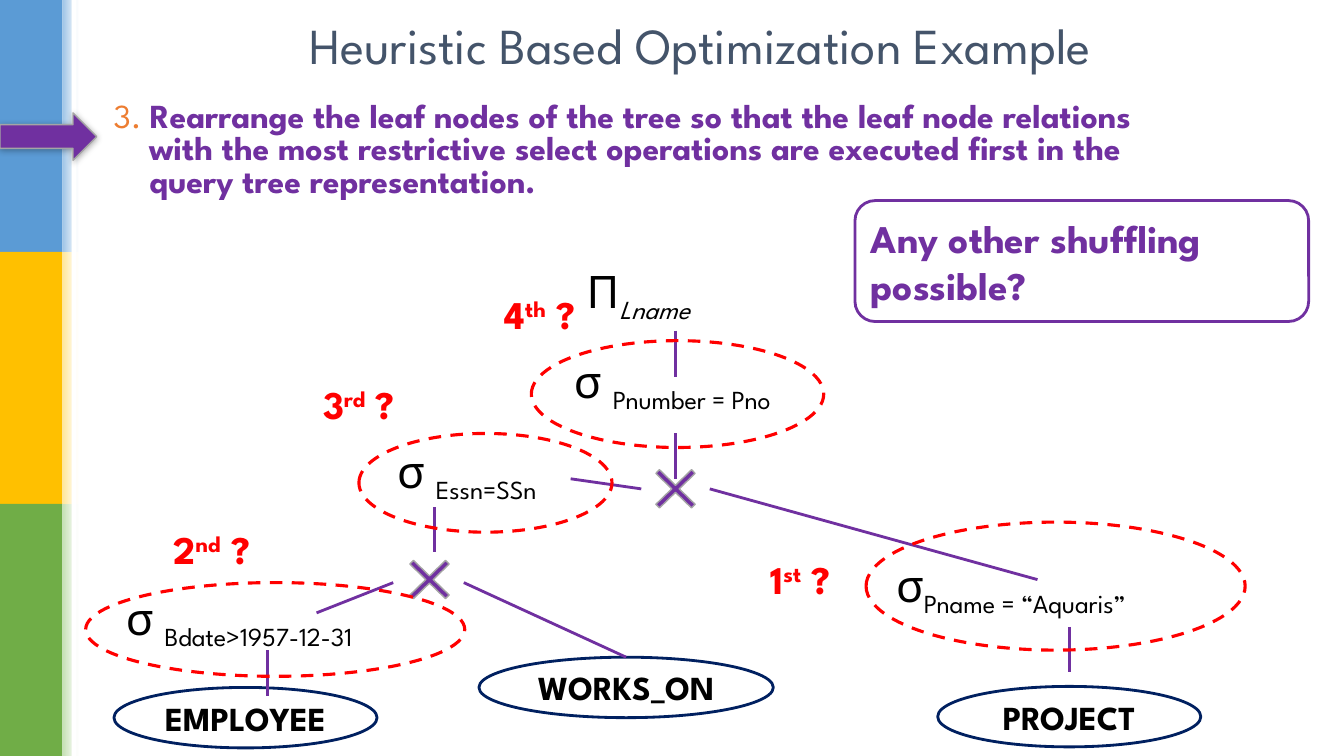
from dataclasses import dataclass
from typing import NamedTuple, Optional

import lxml.etree
import pptx
import pptx.dml.color
import pptx.enum.dml
import pptx.enum.shapes
import pptx.enum.text
import pptx.oxml.ns
import pptx.util

Inches = pptx.util.Inches
Pt = pptx.util.Pt
Preset = pptx.enum.shapes.MSO_SHAPE
Align = pptx.enum.text.PP_ALIGN
Anchor = pptx.enum.text.MSO_ANCHOR
qn = pptx.oxml.ns.qn


@dataclass(frozen=True)
class Theme:
    font: str = "League Spartan"
    title: str = "44546A"
    number: str = "ED7D31"
    purple: str = "7030A0"
    navy: str = "002060"
    red: str = "FF0000"
    grey: str = "A5A5A5"
    black: str = "000000"
    white: str = "FFFFFF"
    title_size: float = 36
    body_size: float = 24
    label_size: float = 28
    operator_size: float = 32


THEME = Theme()


class Box(NamedTuple):
    left: float
    top: float
    width: float
    height: float


class Band(NamedTuple):
    colour: str
    tint: str


class Relation(NamedTuple):
    name: str
    box: Box


class Operator(NamedTuple):
    symbol: str
    condition: str
    box: Box
    italic: bool = False
    centred: bool = False


class Step(NamedTuple):
    number: str
    suffix: str
    label: Box
    ring: Box


class Edge(NamedTuple):
    x1: float
    y1: float
    x2: float
    y2: float
    relation: Optional[str] = None


BANDS = [Band("5B9BD5", "9DC3E6"), Band("FFC000", "FFE699"), Band("70AD47", "C5E0B4")]
INSTRUCTION = [
    "Rearrange the leaf nodes of the tree so that the leaf node relations",
    "with the most restrictive select operations are executed first in the",
    "query tree representation.",
]
RELATIONS = [
    Relation("EMPLOYEE", Box(1.13, 6.82, 2.61, 0.6)),
    Relation("WORKS_ON", Box(4.75, 6.52, 2.92, 0.6)),
    Relation("PROJECT", Box(9.3, 6.81, 2.61, 0.6)),
]
OPERATORS = [
    Operator("Π", "Lname", Box(5.72, 2.57, 1.67, 0.66), italic=True),
    Operator("σ ", "Pnumber = Pno ", Box(0.85, 3.58, 11.7, 0.47), centred=True),
    Operator("σ ", "Essn=SSn", Box(3.84, 4.35, 1.94, 0.64)),
    Operator("σ ", "Bdate>1957-12-31", Box(1.15, 5.81, 3.12, 0.64)),
    Operator("σ", "Pname = “Aquaris”", Box(8.79, 5.48, 3.4, 0.64)),
]
PRODUCTS = [Box(3.92, 5.42, 0.68, 0.66), Box(6.36, 4.52, 0.68, 0.66)]
STEPS = [
    Step("1", "st", Box(7.4, 5.53, 1.08, 0.43), Box(8.59, 5.18, 3.76, 1.27)),
    Step("2", "nd", Box(1.56, 5.23, 1.08, 0.43), Box(0.85, 5.78, 3.76, 0.93)),
    Step("3", "rd", Box(3.02, 3.79, 1.08, 0.43), Box(3.56, 4.3, 2.51, 0.98)),
    Step("4", "th", Box(4.73, 2.88, 1.25, 0.47), Box(5.27, 3.38, 2.9, 1.06)),
]
EDGES = [
    Edge(6.7, 3.28, 6.7, 3.74),
    Edge(6.7, 4.3, 6.7, 4.75),
    Edge(6.36, 4.85, 5.66, 4.75),
    Edge(10.29, 5.75, 7.04, 4.85),
    Edge(4.31, 5.03, 4.31, 5.48),
    Edge(3.9, 5.78, 3.14, 6.08),
    Edge(4.6, 5.78, 6.21, 6.52, "WORKS_ON"),
    Edge(2.65, 6.45, 2.65, 6.9),
    Edge(10.61, 6.22, 10.61, 6.67),
]


def rgb(colour: str) -> pptx.dml.color.RGBColor:
    return pptx.dml.color.RGBColor.from_string(colour)


def add_run(paragraph, text: str, size: float, colour: str, bold=False, italic=False, baseline=0):
    """Add a styled run; baseline is the raise or drop in percent."""
    run = paragraph.add_run()
    run.text = text
    run.font.name = THEME.font
    run.font.size = Pt(size)
    run.font.bold = bold
    run.font.italic = italic
    run.font.color.rgb = rgb(colour)
    if baseline:
        run._r.get_or_add_rPr().set("baseline", str(baseline * 1000))


def add_preset(slide, preset, box: Box, fill=None, line=None, width: float = 1):
    shape = slide.shapes.add_shape(preset, *map(Inches, box))
    shape.shadow.inherit = False
    if fill:
        shape.fill.solid()
        shape.fill.fore_color.rgb = rgb(fill)
    else:
        shape.fill.background()
    if line:
        shape.line.color.rgb = rgb(line)
        shape.line.width = Pt(width)
    else:
        shape.line.fill.background()
    return shape


def add_text(slide, box: Box, anchor=Anchor.TOP, align=Align.LEFT):
    """Add a wrapping text box and return its first paragraph."""
    frame = slide.shapes.add_textbox(*map(Inches, box)).text_frame
    frame.word_wrap = True
    frame.vertical_anchor = anchor
    frame.paragraphs[0].alignment = align
    return frame.paragraphs[0]


def add_side_bands(slide) -> None:
    height = 7.5 / len(BANDS)
    for index, band in enumerate(BANDS):
        add_preset(slide, Preset.RECTANGLE, Box(0, index * height, 0.62, height), band.colour)
        fade = add_preset(slide, Preset.RECTANGLE, Box(0.62, index * height, 0.16, height))
        fade.fill.gradient()
        fade.fill.gradient_angle = 0
        for stop, colour in zip(fade.fill.gradient_stops, (band.tint, THEME.white)):
            stop.color.rgb = rgb(colour)
    add_preset(slide, Preset.RECTANGLE, Box(0.71, 0, 0.05, 7.5), THEME.white)


def format_title(slide) -> None:
    title = slide.shapes.title
    title.left, title.top, title.width, title.height = map(Inches, (1.3, 0.15, 11.29, 0.57))
    title.text_frame.auto_size = pptx.enum.text.MSO_AUTO_SIZE.NONE
    title.text_frame.vertical_anchor = Anchor.MIDDLE
    paragraph = title.text_frame.paragraphs[0]
    paragraph.alignment = Align.CENTER
    add_run(paragraph, "Heuristic Based Optimization Example", THEME.title_size, THEME.title)


def add_instruction(slide) -> None:
    frame = slide.shapes.add_textbox(*map(Inches, (1.03, 0.97, 12, 1.25))).text_frame
    frame.word_wrap = True
    for index, line in enumerate(INSTRUCTION):
        paragraph = frame.add_paragraph() if index else frame.paragraphs[0]
        paragraph.line_spacing = 0.8
        if index:
            paragraph._p.get_or_add_pPr().set("marL", str(Inches(0.35)))
        else:
            add_run(paragraph, "3. ", THEME.body_size, THEME.number)
        add_run(paragraph, line, THEME.body_size, THEME.purple, bold=True)


def add_arrow(slide) -> None:
    arrow = add_preset(slide, Preset.RIGHT_ARROW, Box(0, 1.12, 0.96, 0.47), THEME.purple, THEME.grey)
    effects = arrow._element.spPr.find(qn("a:effectLst"))
    shadow = lxml.etree.SubElement(effects, qn("a:outerShdw"), blurRad=str(Pt(5)),
                                   dist=str(Pt(1)), dir="5400000", rotWithShape="0")
    colour = lxml.etree.SubElement(shadow, qn("a:srgbClr"), val=THEME.black)
    lxml.etree.SubElement(colour, qn("a:alpha"), val="32000")


def add_question(slide) -> None:
    box = Box(8.48, 1.99, 4.5, 1.2)
    frame = add_preset(slide, Preset.ROUNDED_RECTANGLE, box, line=THEME.purple, width=2).text_frame
    frame.word_wrap = True
    frame.vertical_anchor = Anchor.MIDDLE
    frame.paragraphs[0].alignment = Align.LEFT
    add_run(frame.paragraphs[0], "Any other shuffling possible?", THEME.label_size, THEME.purple, bold=True)


def add_relation(slide, relation: Relation):
    shape = add_preset(slide, Preset.OVAL, relation.box, line=THEME.navy, width=2)
    shape.text_frame.word_wrap = False
    shape.text_frame.vertical_anchor = Anchor.MIDDLE
    paragraph = shape.text_frame.paragraphs[0]
    paragraph.alignment = Align.CENTER
    add_run(paragraph, relation.name, THEME.body_size, THEME.black, bold=True)
    return shape


def add_operator(slide, operator: Operator) -> None:
    layout = (Anchor.MIDDLE, Align.CENTER) if operator.centred else (Anchor.TOP, Align.LEFT)
    paragraph = add_text(slide, operator.box, *layout)
    add_run(paragraph, operator.symbol, THEME.operator_size, THEME.black)
    add_run(paragraph, operator.condition, THEME.operator_size, THEME.black,
            italic=operator.italic, baseline=-25)


def add_edge(slide, edge: Edge, relations: dict) -> None:
    connector = slide.shapes.add_connector(pptx.enum.shapes.MSO_CONNECTOR.STRAIGHT, *map(Inches, edge[:4]))
    connector.line.color.rgb = rgb(THEME.purple)
    connector.line.width = Pt(2)
    lxml.etree.SubElement(connector._element.spPr, qn("a:effectLst"))
    if edge.relation:
        connector.end_connect(relations[edge.relation], 0)


def add_step(slide, step: Step) -> None:
    ring = add_preset(slide, Preset.OVAL, step.ring, line=THEME.red, width=2.25)
    ring.line.dash_style = pptx.enum.dml.MSO_LINE.DASH
    paragraph = add_text(slide, step.label, Anchor.MIDDLE, Align.CENTER)
    for text, baseline in ((step.number, 0), (step.suffix, 30), (" ?", 0)):
        add_run(paragraph, text, THEME.label_size, THEME.red, bold=True, baseline=baseline)


def main() -> None:
    presentation = pptx.Presentation()
    presentation.slide_width, presentation.slide_height = Inches(13.33), Inches(7.5)
    slide = presentation.slides.add_slide(presentation.slide_layouts[5])
    add_side_bands(slide)
    format_title(slide)
    add_instruction(slide)
    relations = {relation.name: add_relation(slide, relation) for relation in RELATIONS}
    for box in PRODUCTS:
        add_preset(slide, Preset.MATH_MULTIPLY, box, THEME.purple, THEME.grey).adjustments[0] = 0.077
    for edge in EDGES:
        add_edge(slide, edge, relations)
    add_arrow(slide)
    for operator in OPERATORS:
        add_operator(slide, operator)
    add_question(slide)
    for step in STEPS:
        add_step(slide, step)
    presentation.save("out.pptx")


if __name__ == "__main__":
    main()
